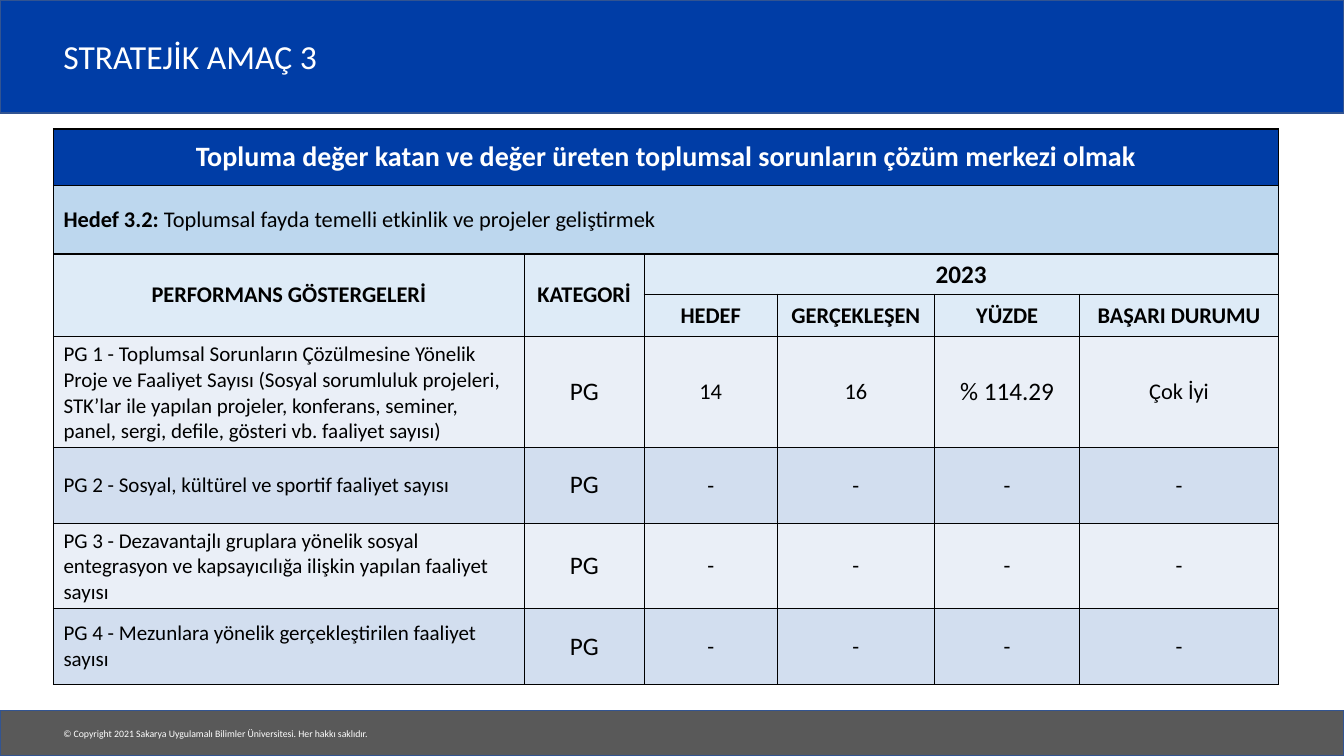
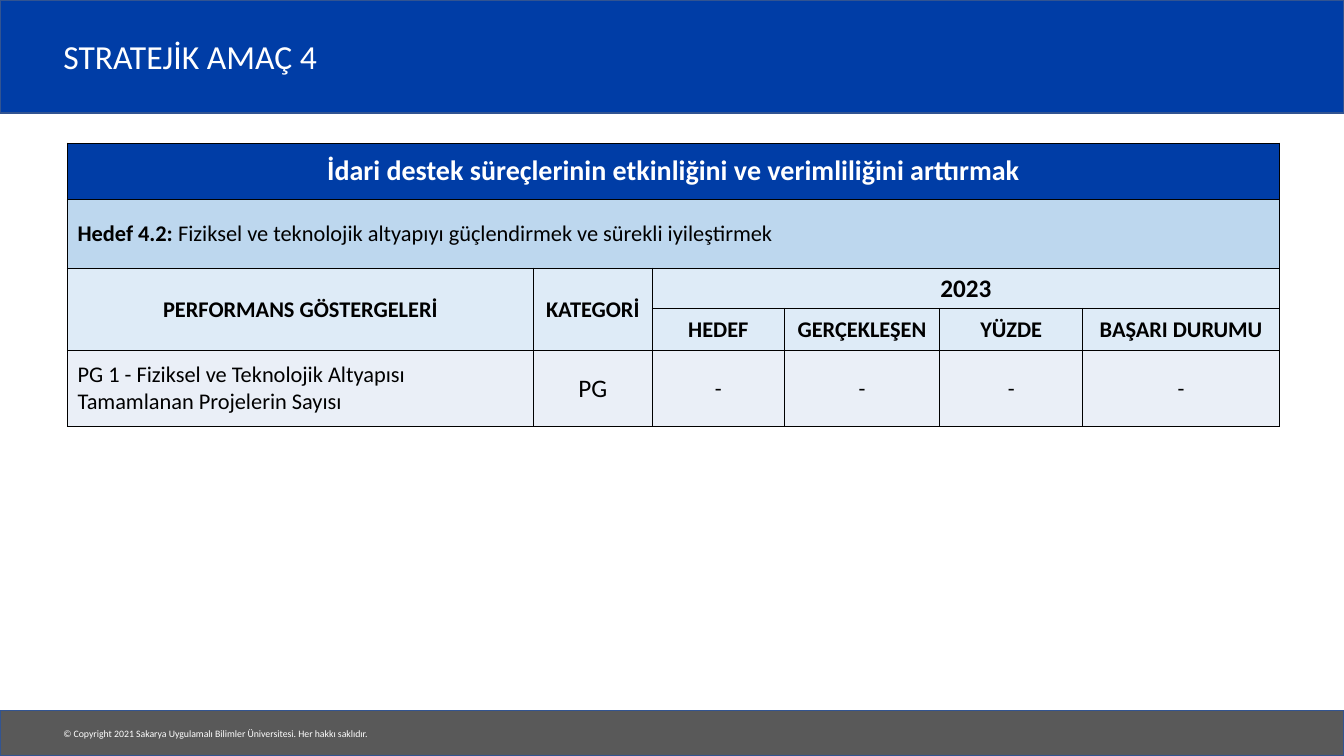
"""Build the performance slides for strategic goals 3 and 4."""
from dataclasses import dataclass

from lxml import etree
from pptx import Presentation
from pptx.dml.color import RGBColor
from pptx.enum import shapes, text
from pptx.oxml.ns import qn
from pptx.slide import Slide
from pptx.table import Table, _Cell
from pptx.util import Inches, Pt

FONT = "Calibri"
WHITE = RGBColor(0xFF, 0xFF, 0xFF)
BLACK = RGBColor(0x00, 0x00, 0x00)
BLUE = RGBColor(0x00, 0x3D, 0xA6)
EDGE = RGBColor(0x32, 0x54, 0x91)
GREY = RGBColor(0x59, 0x59, 0x59)
SKY = RGBColor(0xBD, 0xD7, 0xEE)
PALE = RGBColor(0xDE, 0xEB, 0xF7)
BANDS = (RGBColor(0xEA, 0xEF, 0xF7), RGBColor(0xD2, 0xDE, 0xEF))

WIDE, HIGH = 13.33, 7.5
HEADS = (0.56, 0.68, 0.34, 0.42)
ROW = 0.75
FIELDS = ("HEDEF", "GERÇEKLEŞEN", "YÜZDE", "BAŞARI DURUMU")
NONE = ("-",) * len(FIELDS)
RIGHTS = "© Copyright 2021 Sakarya Uygulamalı Bilimler Üniversitesi. Her hakkı saklıdır."


@dataclass(frozen=True)
class Item:
    name: str
    marks: tuple[str, ...] = NONE


@dataclass(frozen=True)
class Goal:
    title: str
    aim: str
    code: str
    goal: str
    left: float
    top: float
    cols: tuple[float, ...]
    size: int
    items: tuple[Item, ...]


GOALS = (
    Goal(
        "STRATEJİK AMAÇ 3",
        "Topluma değer katan ve değer üreten toplumsal sorunların çözüm merkezi olmak",
        "Hedef 3.2: ",
        "Toplumsal fayda temelli etkinlik ve projeler geliştirmek",
        0.53, 1.28, (4.67, 1.19, 1.32, 1.56, 1.44, 1.97), 15,
        (
            Item("PG 1 - Toplumsal Sorunların Çözülmesine Yönelik Proje ve Faaliyet "
                 "Sayısı (Sosyal sorumluluk projeleri, STK’lar ile yapılan projeler, "
                 "konferans, seminer, panel, sergi, defile, gösteri vb. faaliyet sayısı)",
                 ("14", "16", "% 114.29", "Çok İyi")),
            Item("PG 2 - Sosyal, kültürel ve sportif faaliyet sayısı"),
            Item("PG 3 - Dezavantajlı gruplara yönelik sosyal entegrasyon ve "
                 "kapsayıcılığa ilişkin yapılan faaliyet sayısı"),
            Item("PG 4 - Mezunlara yönelik gerçekleştirilen faaliyet sayısı"),
        ),
    ),
    Goal(
        "STRATEJİK AMAÇ 4",
        "İdari destek süreçlerinin etkinliğini ve verimliliğini arttırmak",
        "Hedef 4.2: ",
        "Fiziksel ve teknolojik altyapıyı güçlendirmek ve sürekli iyileştirmek",
        0.67, 1.42, (4.62, 1.18, 1.31, 1.54, 1.42, 1.95), 16,
        (Item("PG 1 - Fiziksel ve Teknolojik Altyapısı Tamamlanan Projelerin Sayısı"),),
    ),
)


def style(font, size: float, color: RGBColor, bold: bool = False) -> None:
    """Set the face, size, colour and weight of a font."""
    font.name, font.size, font.bold = FONT, Pt(size), bold
    font.color.rgb = color


def band(slide: Slide, top: float, tall: float, fill: RGBColor) -> None:
    """Draw a band across the slide."""
    bar = slide.shapes.add_shape(
        shapes.MSO_SHAPE.RECTANGLE, 0, Inches(top), Inches(WIDE), Inches(tall))
    bar.shadow.inherit = False
    bar.fill.solid()
    bar.fill.fore_color.rgb = fill
    bar.line.color.rgb = EDGE
    bar.line.width = Pt(1)


def label(slide: Slide, words: str, top: float, wide: float, tall: float,
          size: float, wrap: bool) -> None:
    """Place a white line of text at the left margin."""
    box = slide.shapes.add_textbox(Inches(0.53), Inches(top), Inches(wide), Inches(tall))
    frame = box.text_frame
    frame.word_wrap = wrap
    frame.vertical_anchor = text.MSO_ANCHOR.MIDDLE if wrap else text.MSO_ANCHOR.TOP
    frame.text = words
    style(frame.paragraphs[0].runs[0].font, size, WHITE)


def paint(cell: _Cell, fill: RGBColor) -> None:
    """Give a cell black borders and a fill."""
    props = cell._tc.get_or_add_tcPr()
    for side in ("a:lnL", "a:lnR", "a:lnT", "a:lnB"):
        line = etree.SubElement(props, qn(side), w=str(Pt(1)))
        solid = etree.SubElement(line, qn("a:solidFill"))
        etree.SubElement(solid, qn("a:srgbClr"), val=str(BLACK))
    cell.fill.solid()
    cell.fill.fore_color.rgb = fill


def write(cell: _Cell, words: str, size: float, bold: bool = False,
          color: RGBColor = BLACK, mid: bool = True) -> None:
    """Write text into a cell, centred unless told otherwise."""
    cell.vertical_anchor = text.MSO_ANCHOR.MIDDLE
    cell.text_frame.text = words
    para = cell.text_frame.paragraphs[0]
    para.alignment = text.PP_ALIGN.CENTER if mid else text.PP_ALIGN.LEFT
    style(para.runs[0].font, size, color, bold)


def head(table: Table, goal: Goal) -> None:
    """Fill the four heading rows."""
    last = len(goal.cols) - 1
    for start, end in (((0, 0), (0, last)), ((1, 0), (1, last)),
                       ((2, 0), (3, 0)), ((2, 1), (3, 1)), ((2, 2), (2, last))):
        table.cell(*start).merge(table.cell(*end))
    write(table.cell(0, 0), goal.aim, 20, True, WHITE)
    write(table.cell(1, 0), goal.code, 16, True, mid=False)
    run = table.cell(1, 0).text_frame.paragraphs[0].add_run()
    run.text = goal.goal
    style(run.font, 16, BLACK)
    write(table.cell(2, 0), "PERFORMANS GÖSTERGELERİ", 16, True)
    write(table.cell(2, 1), "KATEGORİ", 16, True)
    write(table.cell(2, 2), "2023", 18, True)
    for col, name in enumerate(FIELDS, 2):
        write(table.cell(3, col), name, 16, True)


def grid(slide: Slide, goal: Goal) -> None:
    """Draw the table of a goal."""
    rows = HEADS + (ROW,) * len(goal.items)
    table = slide.shapes.add_table(
        len(rows), len(goal.cols), Inches(goal.left), Inches(goal.top),
        Inches(sum(goal.cols)), Inches(sum(rows))).table
    table.first_row = table.horz_banding = False
    for col, wide in zip(table.columns, goal.cols):
        col.width = Inches(wide)
    fills = (BLUE, SKY, PALE, PALE) + tuple(
        BANDS[i % 2] for i in range(len(goal.items)))
    for row, tall, fill in zip(table.rows, rows, fills):
        row.height = Inches(tall)
        for cell in row.cells:
            paint(cell, fill)
    head(table, goal)
    for row, item in enumerate(goal.items, len(HEADS)):
        write(table.cell(row, 0), item.name, goal.size, mid=False)
        write(table.cell(row, 1), "PG", 18)
        for col, mark in enumerate(item.marks, 2):
            write(table.cell(row, col), mark, 18 if mark.startswith("%") else 16)


def main() -> None:
    """Build and save the slides."""
    deck = Presentation()
    deck.slide_width, deck.slide_height = Inches(WIDE), Inches(HIGH)
    for goal in GOALS:
        slide = deck.slides.add_slide(deck.slide_layouts[6])
        band(slide, 0, 1.12, BLUE)
        band(slide, 7.05, 0.45, GREY)
        label(slide, RIGHTS, 7.17, 3.29, 0.22, 7, False)
        label(slide, goal.title, 0.19, 11.03, 0.73, 24, True)
        grid(slide, goal)
    deck.save("out.pptx")


if __name__ == "__main__":
    main()
